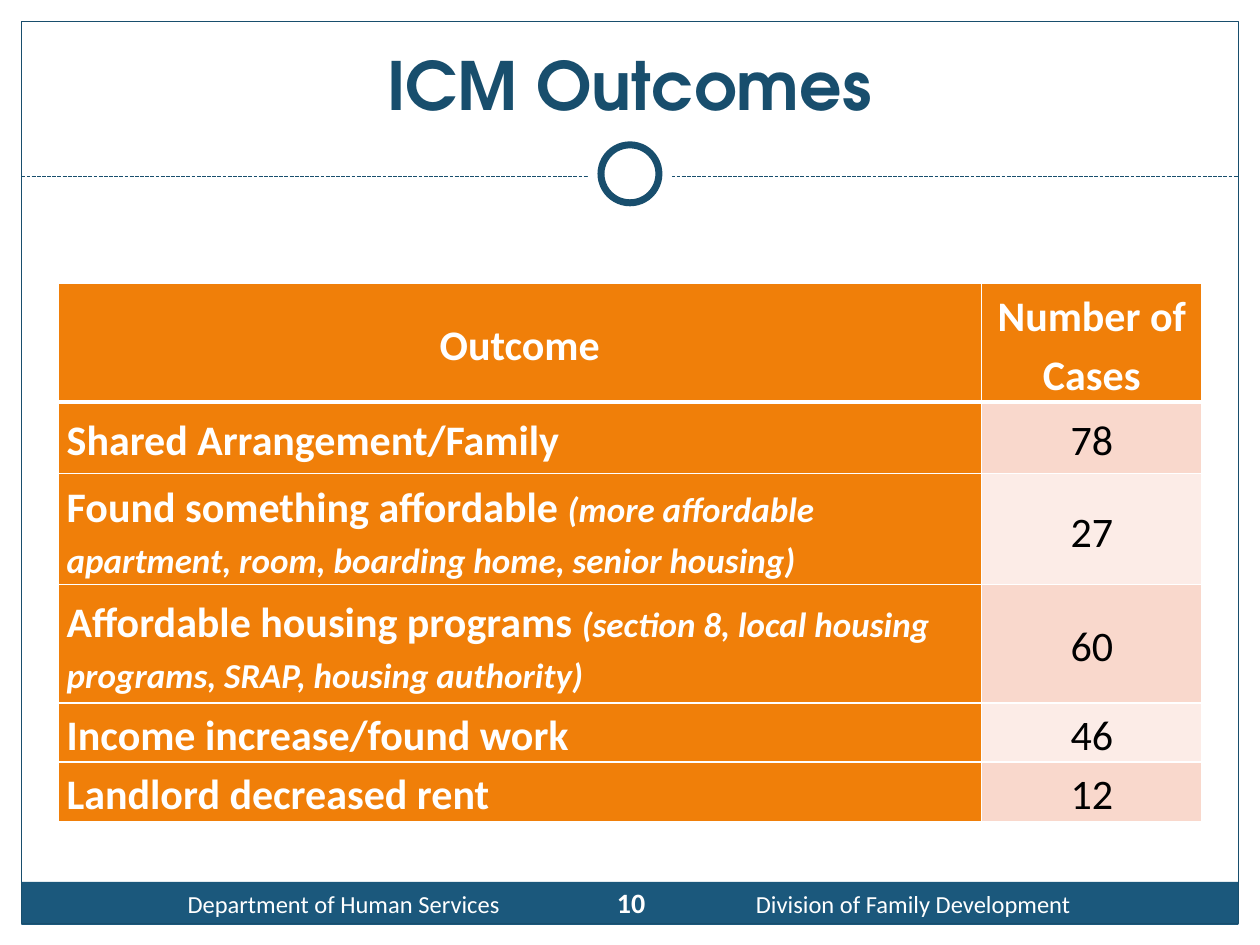
from lxml import etree
from pptx import Presentation
from pptx import util as u
from pptx.dml.color import RGBColor
from pptx.enum import dml, shapes, text
from pptx.oxml import ns

WIDTH, HEIGHT = u.Inches(10), u.Inches(7.5)
WHITE = RGBColor(0xFF, 0xFF, 0xFF)
BLACK = RGBColor(0, 0, 0)
NAVY = RGBColor(0x18, 0x4E, 0x6D)
BLUE = RGBColor(0x1B, 0x58, 0x7C)
ORANGE = RGBColor(0xF0, 0x7F, 0x09)
PINK = RGBColor(0xF9, 0xD8, 0xCC)
PALE = RGBColor(0xFC, 0xEC, 0xE7)

MARGIN = 0.17
INNER = 10 - 2 * MARGIN
RULE_TOP = 1.4
COLUMNS = [7.33, 1.75]
ROWS = [0.94, 0.57, 0.88, 0.94, 0.47, 0.47]
FOOTER_STOPS = [2.46, 4.74, 6.98]

HEADING = {"size": u.Pt(24), "bold": True, "name": "Calibri"}
DETAIL = {"size": u.Pt(20), "bold": True, "italic": True, "name": "Calibri"}
NUMBER = {"size": u.Pt(24), "bold": False, "name": "Calibri"}
FOOTER = {"size": u.Pt(14), "bold": False, "name": "Calibri"}
PAGE = {"size": u.Pt(16), "bold": True, "name": "Calibri"}
TITLE = {"size": u.Pt(38), "bold": True, "name": "TeX Gyre Adventor"}

OUTCOMES = [
    ("Shared Arrangement/Family", "", 78),
    ("Found something affordable ",
     "(more affordable apartment, room, boarding home, senior housing)", 27),
    ("Affordable housing programs ",
     "(section 8, local housing programs, SRAP, housing authority)", 60),
    ("Income increase/found work", "", 46),
    ("Landlord decreased rent", "", 12),
]


def box(left, top, width, height):
    return [u.Inches(value) for value in (left, top, width, height)]


def set_all(target, values):
    for name, value in values.items():
        setattr(target, name, value)


def add_run(paragraph, words, values, color):
    run = paragraph.add_run()
    run.text = words
    set_all(run.font, values)
    run.font.color.rgb = color


def add_plain_shape(slide, kind, place, fill=None, line=None, weight=0.75):
    shape = slide.shapes.add_shape(kind, *box(*place))
    shape.shadow.inherit = False
    if fill is None:
        shape.fill.background()
    else:
        shape.fill.solid()
        shape.fill.fore_color.rgb = fill
    if line is None:
        shape.line.fill.background()
    else:
        shape.line.color.rgb = line
        shape.line.width = u.Pt(weight)


def add_dashed_rule(slide):
    ends = [u.Inches(value) for value in (MARGIN, RULE_TOP, 10 - MARGIN, RULE_TOP)]
    rule = slide.shapes.add_connector(shapes.MSO_CONNECTOR.STRAIGHT, *ends)
    rule.line.color.rgb = NAVY
    rule.line.width = u.Pt(0.75)
    rule.line.dash_style = dml.MSO_LINE.SQUARE_DOT
    etree.SubElement(rule._element.spPr, ns.qn("a:effectLst"))


def add_ring(slide):
    for size, line in ((0.67, None), (0.46, NAVY)):
        place = (5 - size / 2, 1.38 - size / 2, size, size)
        add_plain_shape(slide, shapes.MSO_SHAPE.OVAL, place, WHITE, line, 4)


def add_frame(slide):
    rectangle = shapes.MSO_SHAPE.RECTANGLE
    add_plain_shape(slide, rectangle, (MARGIN, 7, INNER, 0.34), BLUE)
    add_plain_shape(slide, rectangle, (MARGIN, MARGIN, INNER, 7.16), None, NAVY)


def add_footer(slide):
    frame = slide.shapes.add_textbox(*box(MARGIN, 6.98, INNER, 0.37)).text_frame
    frame.word_wrap = True
    paragraph = frame.paragraphs[0]
    stops = etree.SubElement(paragraph._p.get_or_add_pPr(), ns.qn("a:tabLst"))
    for position in FOOTER_STOPS:
        etree.SubElement(stops, ns.qn("a:tab"), pos=str(u.Inches(position)), algn="ctr")
    add_run(paragraph, "\tDepartment of Human Services", FOOTER, WHITE)
    add_run(paragraph, "\t10", PAGE, WHITE)
    add_run(paragraph, "\tDivision of Family Development", FOOTER, WHITE)


def format_title(slide):
    title = slide.shapes.title
    set_all(title, dict(zip(("left", "top", "width", "height"), box(0.33, 0.25, 9.33, 0.83))))
    title.text_frame.vertical_anchor = text.MSO_ANCHOR.MIDDLE
    paragraph = title.text_frame.paragraphs[0]
    paragraph.alignment = text.PP_ALIGN.CENTER
    add_run(paragraph, "ICM Outcomes", TITLE, NAVY)


def add_borders(cell, top, bottom):
    properties = cell._tc.get_or_add_tcPr()
    for side, weight in (("L", 1), ("R", 1), ("T", top), ("B", bottom)):
        line = etree.SubElement(properties, ns.qn(f"a:ln{side}"), w=str(u.Pt(weight)))
        fill = etree.SubElement(line, ns.qn("a:solidFill"))
        etree.SubElement(fill, ns.qn("a:srgbClr"), val=str(WHITE))


def fill_cell(table, row, column, pieces, fill, color, alignment):
    cell = table.cell(row, column)
    add_borders(cell, 3 if row == 1 else 1, 3 if row == 0 else 1)
    set_all(cell, {
        "margin_left": u.Inches(0.07), "margin_right": u.Inches(0.07),
        "margin_top": 0, "margin_bottom": 0,
        "vertical_anchor": text.MSO_ANCHOR.MIDDLE,
    })
    cell.fill.solid()
    cell.fill.fore_color.rgb = fill
    paragraph = cell.text_frame.paragraphs[0]
    set_all(paragraph, {"alignment": alignment, "line_spacing": 1.15})
    for words, values in pieces:
        if words:
            add_run(paragraph, words, values, color)


def add_outcome_table(slide):
    place = box(0.46, 2.25, sum(COLUMNS), sum(ROWS))
    table = slide.shapes.add_table(len(ROWS), len(COLUMNS), *place).table
    for column, width in zip(table.columns, COLUMNS):
        column.width = u.Inches(width)
    for row, height in zip(table.rows, ROWS):
        row.height = u.Inches(height)
    center, left = text.PP_ALIGN.CENTER, text.PP_ALIGN.LEFT
    for column, words in enumerate(("Outcome", "Number of Cases")):
        fill_cell(table, 0, column, [(words, HEADING)], ORANGE, WHITE, center)
    for row, (outcome, detail, cases) in enumerate(OUTCOMES, 1):
        pieces = [(outcome, HEADING), (detail, DETAIL)]
        fill_cell(table, row, 0, pieces, ORANGE, WHITE, left)
        band = PINK if row % 2 else PALE
        fill_cell(table, row, 1, [(str(cases), NUMBER)], band, BLACK, center)


def main():
    presentation = Presentation()
    set_all(presentation, {"slide_width": WIDTH, "slide_height": HEIGHT})
    slide = presentation.slides.add_slide(presentation.slide_layouts[5])
    add_frame(slide)
    add_dashed_rule(slide)
    add_ring(slide)
    add_footer(slide)
    format_title(slide)
    add_outcome_table(slide)
    presentation.save("out.pptx")


if __name__ == "__main__":
    main()
